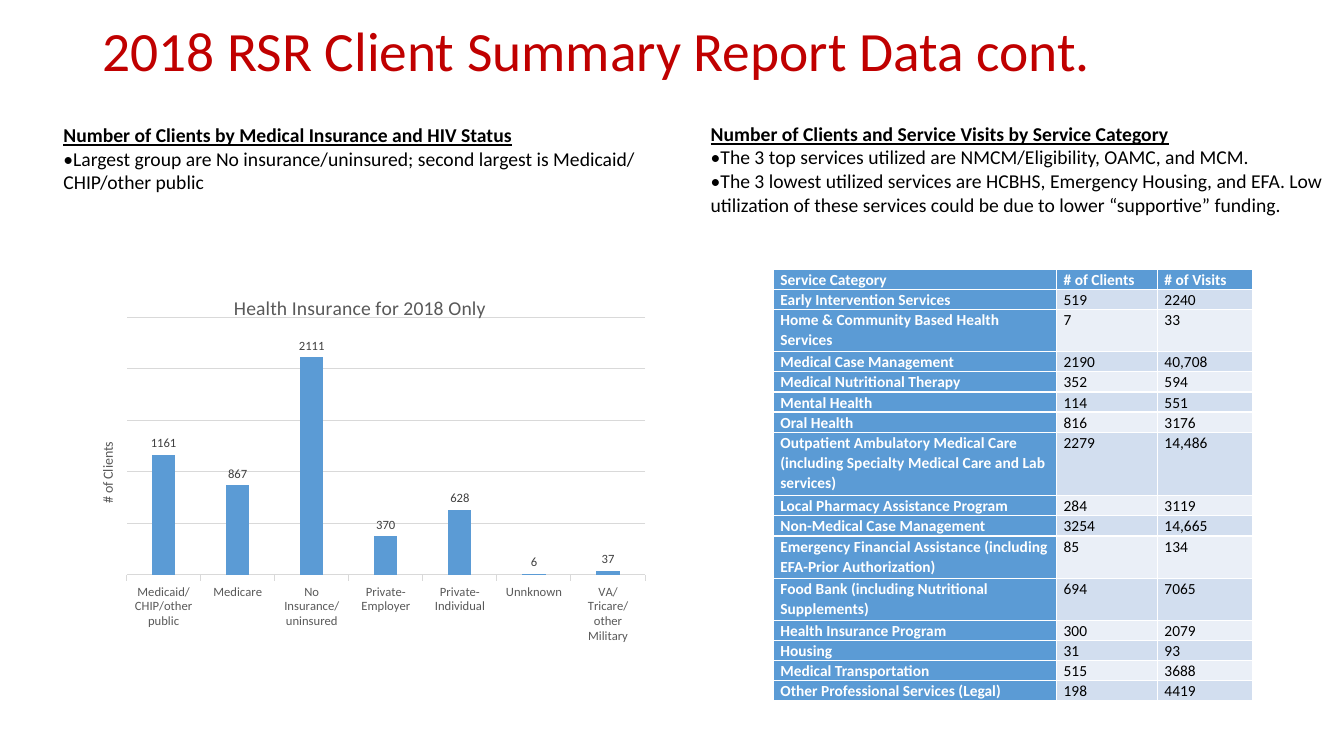
import pptx
import pptx.chart.data
import pptx.dml.color
import pptx.enum.chart
import pptx.enum.text
import pptx.oxml
import pptx.util
from pptx.util import Inches


class Theme:
    font = "Calibri"
    title_size, body_size, table_size = 39.6, 14, 11
    chart_title_size, axis_title_size, label_size = 14, 10, 9
    red, black, white = "C00000", "000000", "FFFFFF"
    blue, dark_band, light_band = "5B9BD5", "D2DEEF", "EAEFF7"
    axis_text, label_text, grid = "595959", "404040", "D9D9D9"


def style(font, size, color, bold=False):
    font.name = Theme.font
    font.size = pptx.util.Pt(size)
    font.bold = bold
    font.color.rgb = pptx.dml.color.RGBColor.from_string(color)


def place_title(chart_title, text, size, x, y):
    chart_title.text_frame.text = text
    style(chart_title.text_frame.paragraphs[0].runs[0].font, size, Theme.axis_text)
    for old in chart_title._element.xpath("c:layout"):
        chart_title._element.remove(old)
    layout = pptx.oxml.parse_xml(
        '<c:layout xmlns:c="http://schemas.openxmlformats.org/drawingml/2006/chart">'
        '<c:manualLayout><c:xMode val="edge"/><c:yMode val="edge"/>'
        f'<c:x val="{x}"/><c:y val="{y}"/></c:manualLayout></c:layout>')
    chart_title._element.xpath("c:tx")[0].addnext(layout)


deck = pptx.Presentation()
deck.slide_width, deck.slide_height = Inches(13.33), Inches(7.5)
page = deck.slides.add_slide(deck.slide_layouts[6])

title = page.shapes.add_textbox(Inches(0.92), Inches(0.27), Inches(11.5), Inches(0.52))
title.text_frame.word_wrap = True
title.text_frame.vertical_anchor = pptx.enum.text.MSO_ANCHOR.MIDDLE
title.text_frame.text = "2018 RSR Client Summary Report Data cont."
title.text_frame.paragraphs[0].line_spacing = 0.9
style(title.text_frame.paragraphs[0].runs[0].font, Theme.title_size, Theme.red)

summaries = [
    (0.53, 1.17, 6.05, 0.81, [
        "Number of Clients by Medical Insurance and HIV Status",
        "•Largest group are No insurance/uninsured; second largest is Medicaid/ CHIP/other public",
    ]),
    (6.95, 1.16, 6.39, 1.04, [
        "Number of Clients and Service Visits by Service Category",
        "•The 3 top services utilized are NMCM/Eligibility, OAMC, and MCM.",
        "•The 3 lowest utilized services are HCBHS, Emergency Housing, and EFA. Low "
        "utilization of these services could be due to lower “supportive” funding.",
    ]),
]
for left, top, width, height, lines in summaries:
    box = page.shapes.add_textbox(Inches(left), Inches(top), Inches(width), Inches(height))
    box.text_frame.word_wrap = True
    box.text_frame.text = "\n".join(lines)
    for index, para in enumerate(box.text_frame.paragraphs):
        span = para.runs[0]
        style(span.font, Theme.body_size, Theme.black, bold=index == 0)
        span.font.underline = index == 0

insurance = {
    "Medicaid/CHIP/other public": 1161,
    "Medicare": 867,
    "No Insurance/uninsured": 2111,
    "Private- Employer": 370,
    "Private- Individual": 628,
    "Unnknown": 6,
    "VA/Tricare/other Military": 37,
}
chart_data = pptx.chart.data.CategoryChartData()
chart_data.categories = list(insurance)
chart_data.add_series("Series 1", list(insurance.values()))
chart = page.shapes.add_chart(
    pptx.enum.chart.XL_CHART_TYPE.COLUMN_CLUSTERED,
    Inches(0.53), Inches(2.67), Inches(6.05), Inches(4.33), chart_data).chart
style(chart.font, Theme.axis_title_size, Theme.black)
chart.has_legend = False
chart.has_title = True
place_title(chart.chart_title, "Health Insurance for 2018 Only", Theme.chart_title_size, 0.29, 0.05)

grid_color = pptx.dml.color.RGBColor.from_string(Theme.grid)
value_axis = chart.value_axis
value_axis.minimum_scale, value_axis.maximum_scale, value_axis.major_unit = 0, 2500, 500
value_axis.has_title = True
place_title(value_axis.axis_title, "# of Clients", Theme.axis_title_size, 0.07, 0.39)
value_axis.axis_title.text_frame._txBody.bodyPr.set("rot", "-5400000")
value_axis.axis_title.text_frame._txBody.bodyPr.set("vert", "horz")
value_axis.visible = False
category_axis = chart.category_axis
category_axis.major_tick_mark = pptx.enum.chart.XL_TICK_MARK.OUTSIDE
style(category_axis.tick_labels.font, Theme.label_size, Theme.axis_text)
for line in (value_axis.major_gridlines.format.line, category_axis.format.line):
    line.width = pptx.util.Pt(0.75)
    line.color.rgb = grid_color

plot = chart.plots[0]
plot.gap_width, plot.overlap, plot.vary_by_categories = 219, -27, False
series = plot.series[0]
series.format.fill.solid()
series.format.fill.fore_color.rgb = pptx.dml.color.RGBColor.from_string(Theme.blue)
series.data_labels.show_value = True
series.data_labels.position = pptx.enum.chart.XL_LABEL_POSITION.OUTSIDE_END
style(series.data_labels.font, Theme.label_size, Theme.label_text)
plot_area = chart._chartSpace.chart.plotArea
for old in plot_area.xpath("c:layout"):
    plot_area.remove(old)
plot_area.insert(0, pptx.oxml.parse_xml(
    '<c:layout xmlns:c="http://schemas.openxmlformats.org/drawingml/2006/chart">'
    '<c:manualLayout><c:layoutTarget val="inner"/><c:xMode val="edge"/><c:yMode val="edge"/>'
    '<c:x val="0.12"/><c:y val="0.11"/><c:w val="0.85"/><c:h val="0.59"/>'
    '</c:manualLayout></c:layout>'))

services = [
    ("Service Category", "# of Clients", "# of Visits", 1),
    ("Early Intervention Services", "519", "2240", 1),
    ("Home & Community Based Health Services", "7", "33", 2),
    ("Medical Case Management", "2190", "40,708", 1),
    ("Medical Nutritional Therapy", "352", "594", 1),
    ("Mental Health", "114", "551", 1),
    ("Oral Health", "816", "3176", 1),
    ("Outpatient Ambulatory Medical Care (including Specialty Medical Care and Lab services)",
     "2279", "14,486", 3),
    ("Local Pharmacy Assistance Program", "284", "3119", 1),
    ("Non-Medical Case Management", "3254", "14,665", 1),
    ("Emergency Financial Assistance (including EFA-Prior Authorization)", "85", "134", 2),
    ("Food Bank (including Nutritional Supplements)", "694", "7065", 2),
    ("Health Insurance Program", "300", "2079", 1),
    ("Housing", "31", "93", 1),
    ("Medical Transportation", "515", "3688", 1),
    ("Other Professional Services (Legal)", "198", "4419", 1),
]
table = page.shapes.add_table(
    len(services), 3, Inches(7.67), Inches(2.67), Inches(4.75), Inches(4.33)).table
table.first_col = True
for column, width in zip(table.columns, (2.81, 1, 0.94)):
    column.width = Inches(width)
for row, (*texts, line_count) in enumerate(services):
    table.rows[row].height = Inches(0.21 * line_count - 0.01 * (line_count == 1))
    for column, text in enumerate(texts):
        cell = table.cell(row, column)
        heading = row == 0 or column == 0
        band = Theme.dark_band if row % 2 else Theme.light_band
        cell.fill.solid()
        cell.fill.fore_color.rgb = pptx.dml.color.RGBColor.from_string(
            Theme.blue if heading else band)
        cell.margin_left = cell.margin_right = Inches(0.07)
        cell.margin_top = cell.margin_bottom = 0
        cell.text_frame.text = text
        para = cell.text_frame.paragraphs[0]
        para.line_spacing = 1.07
        style(para.runs[0].font, Theme.table_size,
              Theme.white if heading else Theme.black, heading)

deck.save("out.pptx")
